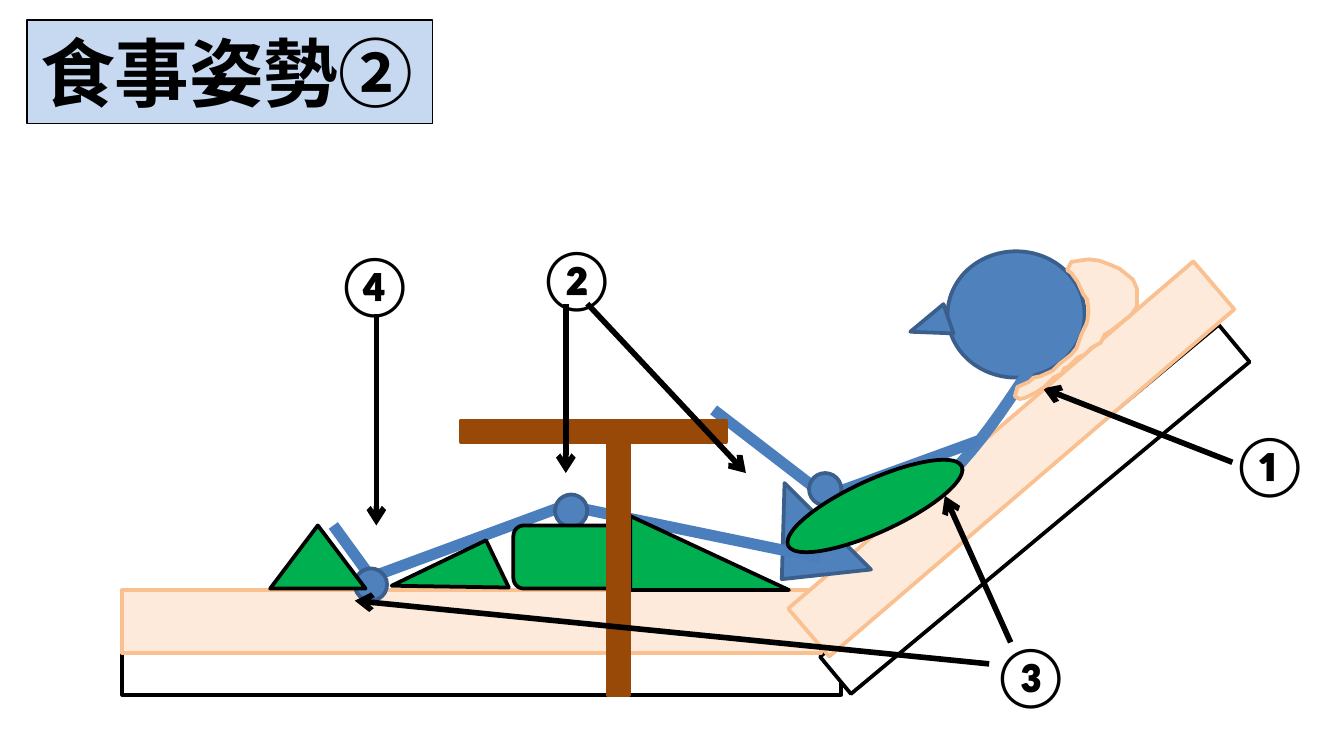
from lxml.etree import SubElement
from pptx import Presentation
from pptx.dml.color import RGBColor
from pptx.enum.shapes import MSO_CONNECTOR, MSO_SHAPE
from pptx.enum.text import MSO_ANCHOR, MSO_AUTO_SIZE
from pptx.oxml.ns import qn
from pptx.util import Inches, Pt

BLACK, WHITE, GREEN, BROWN = "000000", "FFFFFF", "00B050", "984807"
BED, BED_LINE = "FDEADA", "FAC090"
BODY, BODY_LINE, LIMB = "4F81BD", "3A5F8C", "4B7EBC"
RECT, ROUND, OVAL = MSO_SHAPE.RECTANGLE, MSO_SHAPE.ROUNDED_RECTANGLE, MSO_SHAPE.OVAL
TRI, WEDGE = MSO_SHAPE.ISOSCELES_TRIANGLE, MSO_SHAPE.RIGHT_TRIANGLE

# 16:9 slide
prs = Presentation()
prs.slide_width = Inches(10)
prs.slide_height = Inches(10 * 9 / 16)
s = prs.slides.add_slide(prs.slide_layouts[6])


def rgb(color):
    return RGBColor.from_string(color)


def add_text(text, x, y, w, h, size=32, fill=None, anchor=MSO_ANCHOR.TOP):
    sp = s.shapes.add_textbox(Inches(x), Inches(y), Inches(w), Inches(h))
    if fill:
        sp.fill.solid()
        sp.fill.fore_color.rgb = rgb(fill)
        sp.line.color.rgb = rgb(BLACK)
        sp.line.width = Pt(0.75)
    tf = sp.text_frame
    tf.word_wrap = False
    tf.auto_size = MSO_AUTO_SIZE.SHAPE_TO_FIT_TEXT
    tf.vertical_anchor = anchor
    r = tf.paragraphs[0].add_run()
    r.text = text
    r.font.name, r.font.size, r.font.bold = "Calibri", Pt(size), True
    r.font.color.rgb = rgb(BLACK)


# Title
add_text("食事姿勢②", 0.2, 0.15, 3.02, 0.77, size=40, fill="C6D9F1",
         anchor=MSO_ANCHOR.MIDDLE)

# Spine: two cubic curves sampled into short segments
curves = [
    [(7.79, 2.55), (7.51, 2.98), (7.24, 3.41), (6.93, 3.65)],
    [(6.93, 3.65), (6.62, 3.89), (5.91, 3.99), (5.91, 3.99)],
]
spine = []
for curve in curves:
    for t in [i / 12 for i in range(13)]:
        weights = [(1 - t) ** 3, 3 * t * (1 - t) ** 2, 3 * t ** 2 * (1 - t), t ** 3]
        spine.append([sum(k * pt[axis] for k, pt in zip(weights, curve))
                      for axis in (0, 1)])

# Pillow outline
pillow = [
    (7.94, 2.01), (7.97, 1.95), (8.03, 1.94), (8.1, 1.93), (8.18, 1.94),
    (8.26, 1.97), (8.33, 2), (8.38, 2.04), (8.43, 2.08), (8.46, 2.15),
    (8.46, 2.28), (8.42, 2.34), (8.37, 2.38), (8.32, 2.42), (8.27, 2.46),
    (8.22, 2.49), (8.19, 2.55), (8.12, 2.59), (8.07, 2.64), (8.02, 2.66),
    (7.95, 2.73), (7.92, 2.74), (7.9, 2.78), (7.84, 2.81), (7.77, 2.88),
    (7.71, 2.92), (7.63, 2.96), (7.59, 2.97), (7.55, 2.95), (7.57, 2.88),
    (7.66, 2.84), (7.69, 2.81), (7.74, 2.8), (7.83, 2.76), (7.88, 2.71),
    (7.97, 2.64), (8.01, 2.59), (8.05, 2.48), (8.08, 2.42), (8.09, 2.39),
    (8.1, 2.31), (8.09, 2.23), (8.06, 2.19), (8.02, 2.1), (7.97, 2.03),
]

# Lines as x1, y1, x2, y2
limbs = [
    (6.1, 4.15, 4.21, 3.76), (4.21, 3.76, 2.72, 4.31), (2.8, 4.35, 2.48, 3.91),
    (7.28, 3.28, 6.18, 3.68), (6.18, 3.72, 5.31, 3.05),
]
arrows = [
    (9.17, 3.44, 7.76, 2.89), (4.21, 2.26, 4.21, 3.52), (4.37, 2.26, 5.55, 3.52),
    (7.52, 4.78, 7.03, 3.69), (7.36, 4.94, 2.64, 4.47), (2.8, 2.34, 2.8, 3.91),
]

# Shapes as preset, x, y, width, height, rotation, fill, line
bed_and_head = [
    (RECT, 0.91, 4.86, 5.35, 0.31, 0, WHITE, BLACK),
    (RECT, 5.77, 3.61, 3.86, 0.36, 320.2, WHITE, BLACK),
    (RECT, 0.91, 4.39, 5.2, 0.47, 0, BED, BED_LINE),
    (RECT, 5.54, 3.18, 3.97, 0.47, 319.4, BED, BED_LINE),
    (OVAL, 7.05, 1.87, 1.02, 0.94, 0, BODY, BODY_LINE),
]
hip = [(TRI, 5.52, 3.84, 0.91, 0.52, 225, BODY, BODY_LINE)]
joints = [(OVAL, x, y, 0.24, 0.24, 0, BODY, BODY_LINE)
          for x, y in [(4.13, 3.68), (2.64, 4.23), (6.02, 3.52)]]
cushions = [
    (TRI, 2.01, 3.91, 0.71, 0.47, 0, GREEN, BLACK),
    (ROUND, 3.82, 3.91, 0.87, 0.47, 0, GREEN, BLACK),
    (WEDGE, 2.96, 4.17, 0.78, 0.39, 154.3, GREEN, BLACK),
    (WEDGE, 4.69, 3.84, 1.18, 0.55, 0, GREEN, BLACK),
    (OVAL, 5.8, 3.57, 1.42, 0.39, 335.5, GREEN, BLACK),
]
table = [
    (RECT, 3.43, 3.13, 1.97, 0.16, 0, BROWN, BROWN),
    (RECT, 3.66, 4.15, 1.89, 0.16, 270, BROWN, BROWN),
]
beak = [(TRI, 6.8, 2.27, 0.23, 0.3, 251.2, BODY, BODY_LINE)]

# Layers from back to front: shapes, outline, lines
layers = [
    (bed_and_head, spine, []),
    (hip, [], limbs),
    (joints + cushions + table, [], arrows),
    (beak, pillow, []),
]
for shapes, outline, lines in layers:
    for preset, x, y, w, h, rotation, fill, line in shapes:
        sp = s.shapes.add_shape(preset, Inches(x), Inches(y), Inches(w), Inches(h))
        sp.shadow.inherit = False
        sp.rotation = rotation
        if shapes is hip:
            sp.adjustments[0] = 0.46
        sp.fill.solid()
        sp.fill.fore_color.rgb = rgb(fill)
        sp.line.color.rgb = rgb(line)
        sp.line.width = Pt(2)

    if outline:
        closed = outline is pillow
        pts = [(Inches(x), Inches(y)) for x, y in outline]
        builder = s.shapes.build_freeform(*pts[0])
        builder.add_line_segments(pts[1:], close=closed)
        sp = builder.convert_to_shape()
        sp.shadow.inherit = False
        if closed:
            sp.fill.solid()
            sp.fill.fore_color.rgb = rgb(BED)
        else:
            sp.fill.background()
        sp.line.color.rgb = rgb(BED_LINE if closed else BODY)
        sp.line.width = Pt(2 if closed else 6)

    for ends in lines:
        is_arrow = lines is arrows
        cn = s.shapes.add_connector(MSO_CONNECTOR.STRAIGHT, *map(Inches, ends))
        cn.line.color.rgb = rgb(BLACK if is_arrow else LIMB)
        cn.line.width = Pt(3 if is_arrow else 6)
        spPr = cn._element.spPr
        if is_arrow:
            SubElement(spPr.get_or_add_ln(), qn("a:tailEnd"), type="arrow")
        SubElement(spPr, qn("a:effectLst"))

# Numbered callouts
for number, x, y in [("①", 9.06, 3.13), ("②", 3.9, 1.74),
                     ("③", 7.28, 4.7), ("④", 2.4, 1.79)]:
    add_text(number, x, y, 0.65, 0.64)

prs.save("out.pptx")
